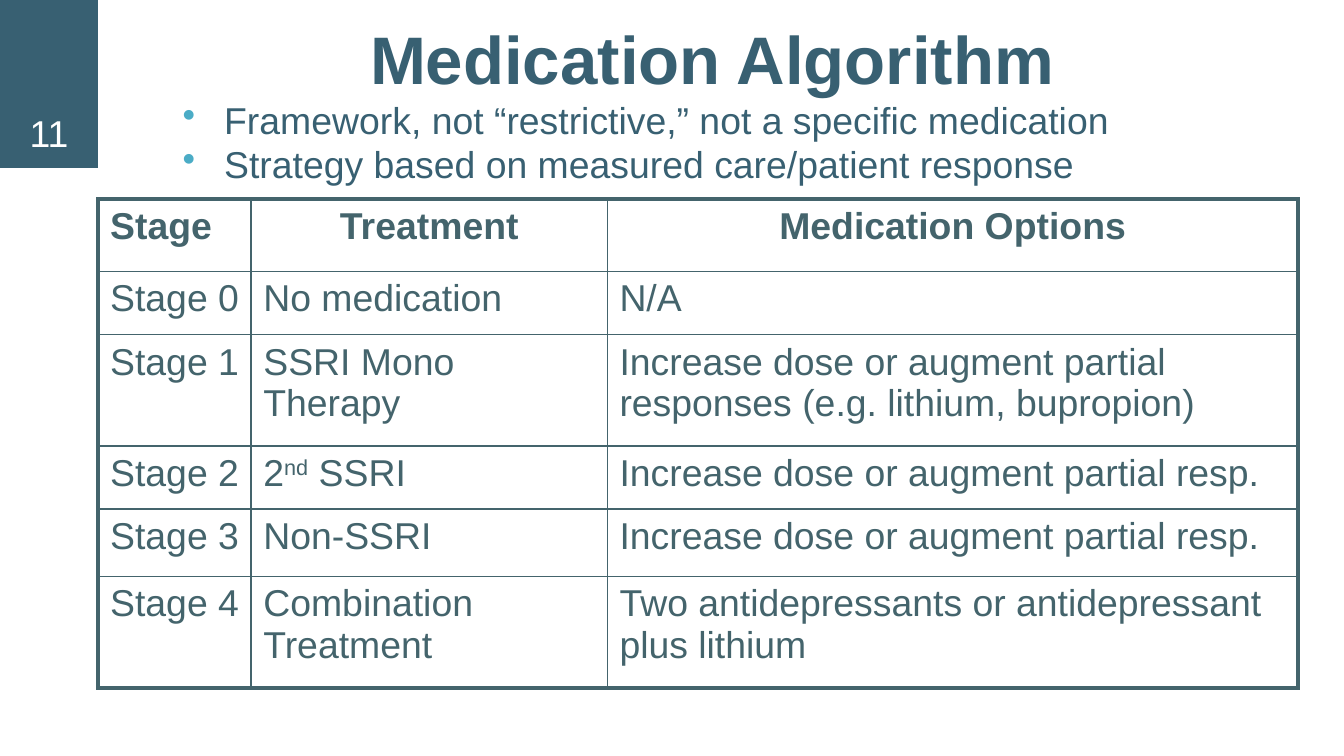
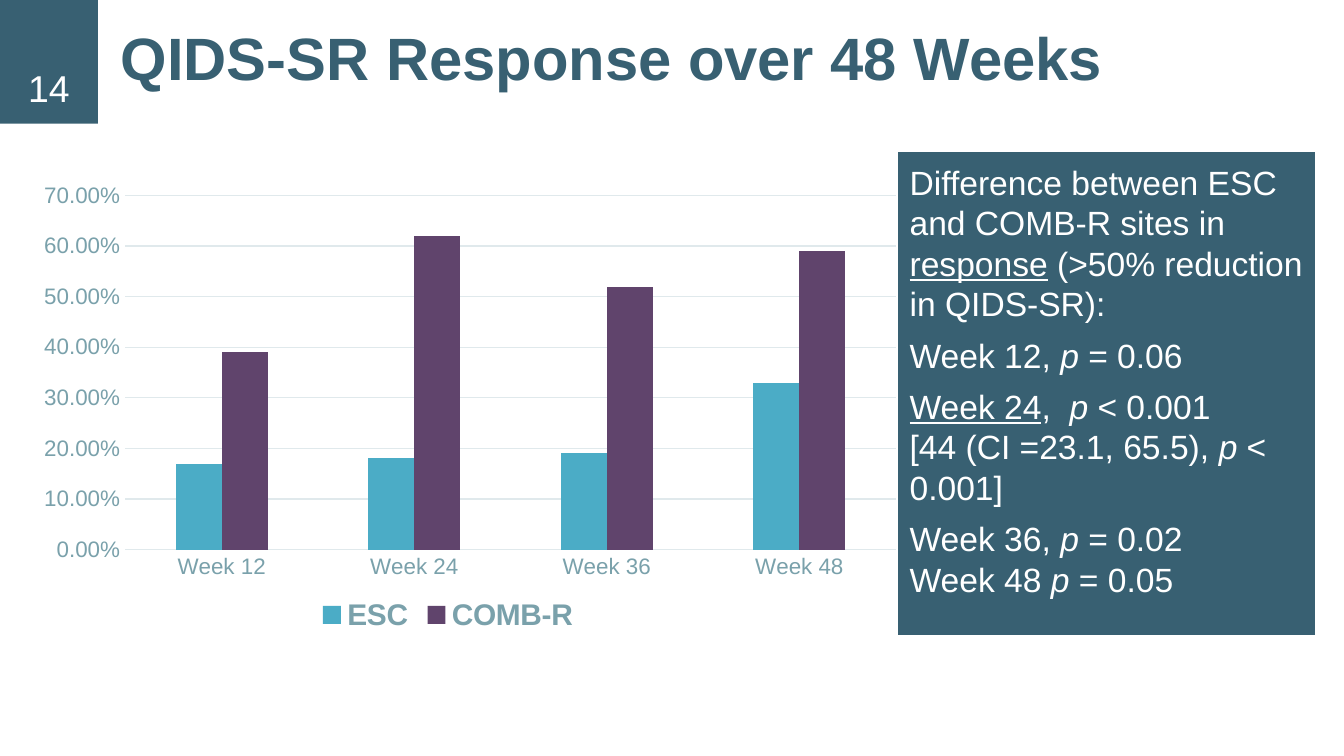
"""Build two slides on a medication algorithm and the response it produced."""
from dataclasses import dataclass

from lxml import etree
from pptx import Presentation
from pptx import util as u
from pptx.chart.data import CategoryChartData
from pptx.dml.color import RGBColor
from pptx.enum import chart as charts, shapes, text
from pptx.oxml import ns


@dataclass(frozen=True)
class Theme:
    font: str = "Arial"
    navy: str = "386072"
    slate: str = "44646C"
    axis: str = "7AA1AB"
    grid: str = "E0E9EC"
    teal: str = "4BACC6"
    plum: str = "60446C"
    white: str = "FFFFFF"
    body_size: int = 20
    panel_size: int = 18
    legend_size: int = 16
    axis_size: int = 12
    chart_size: int = 10
    outer_border: float = 2.25
    inner_border: float = 1


THEME = Theme()
LEFT, CENTER = text.PP_ALIGN.LEFT, text.PP_ALIGN.CENTER
MIDDLE, BOTTOM = text.MSO_ANCHOR.MIDDLE, text.MSO_ANCHOR.BOTTOM

ALGORITHM = {
    "title": "Medication Algorithm",
    "number": "11",
    "bullets": [
        "Framework, not “restrictive,” not a specific medication",
        "Strategy based on measured care/patient response",
    ],
    "columns": [1.14, 2.65, 5.14],
    "heights": [0.54, 0.47, 0.83, 0.47, 0.5, 0.83],
    "rows": [
        ("Stage", "Treatment", "Medication Options"),
        ("Stage 0", "No medication", "N/A"),
        ("Stage 1", "SSRI Mono Therapy",
         "Increase dose or augment partial responses (e.g. lithium, bupropion)"),
        ("Stage 2", [("2", ""), ("nd", "superscript"), (" SSRI", "")],
         "Increase dose or augment partial resp."),
        ("Stage 3", "Non-SSRI", "Increase dose or augment partial resp."),
        ("Stage 4", "Combination Treatment",
         "Two antidepressants or antidepressant plus lithium"),
    ],
}

RESPONSE = {
    "title": "QIDS-SR Response over 48 Weeks",
    "number": "14",
    "weeks": ["Week 12", "Week 24", "Week 36", "Week 48"],
    "series": [
        ("ESC", (0.17, 0.18, 0.19, 0.33), THEME.teal),
        ("COMB-R", (0.39, 0.62, 0.52, 0.59), THEME.plum),
    ],
    "plot": {"x": 0.14, "y": 0.14, "w": 0.86, "h": 0.69},
    "findings": [
        ([("Difference between ESC and COMB-R sites in ", ""),
          ("response", "underline"), (" (>50% reduction in QIDS-SR):", "")], 6),
        ([("Week 12, ", ""), ("p", "italic"), (" = 0.06", "")], 6),
        ([("Week 24", "underline"), (",  ", ""), ("p", "italic"), (" < 0.001", "")], 0),
        ([("[44 (CI =23.1, 65.5), ", ""), ("p", "italic"), (" < 0.001]", "")], 6),
        ([("Week 36, ", ""), ("p ", "italic"), ("= 0.02", "")], 0),
        ([("Week 48 ", ""), ("p", "italic"), (" = 0.05", "")], 0),
    ],
}


def color(code):
    return RGBColor.from_string(code)


def box(left, top, width, height):
    return [u.Inches(value) for value in (left, top, width, height)]


def add_solid_fill(parent, code):
    fill = etree.SubElement(parent, ns.qn("a:solidFill"))
    etree.SubElement(fill, ns.qn("a:srgbClr"), val=code)


def style_font(font, size, code, bold=False):
    font.name, font.size, font.bold = THEME.font, u.Pt(size), bold
    font.color.rgb = color(code)


def write(paragraph, content, size, code, bold=False, align=LEFT):
    """Fill a paragraph from a string or from (text, style) pairs."""
    paragraph.alignment = align
    pairs = [(content, "")] if isinstance(content, str) else content
    for words, style in pairs:
        run = paragraph.add_run()
        run.text = words
        style_font(run.font, size, code, bold)
        if style == "superscript":
            run.font._element.set("baseline", "30000")
        elif style:
            setattr(run.font, style, True)


def add_text_box(slide, place, anchor):
    frame = slide.shapes.add_textbox(*box(*place)).text_frame
    frame.word_wrap = True
    frame.vertical_anchor = anchor
    frame.margin_left = frame.margin_right = u.Inches(0.1)
    frame.margin_top = frame.margin_bottom = u.Inches(0.1)
    return frame


def add_block(slide, place):
    block = slide.shapes.add_shape(shapes.MSO_SHAPE.RECTANGLE, *box(*place))
    block.shadow.inherit = False
    block.fill.solid()
    block.fill.fore_color.rgb = color(THEME.navy)
    block.line.fill.background()
    return block


def add_slide(presentation, content, number_height, title_height, title_size, align):
    slide = presentation.slides.add_slide(presentation.slide_layouts[6])
    add_block(slide, (0, 0, 0.73, 1.25))
    title = add_text_box(slide, (0.8, 0, 9, title_height), BOTTOM)
    write(title.paragraphs[0], content["title"], title_size, THEME.navy, True, align)
    number = add_text_box(slide, (0, 0, 0.73, number_height), BOTTOM)
    write(number.paragraphs[0], content["number"],
          THEME.body_size, THEME.white, align=CENTER)
    return slide


def add_bullets(slide, lines):
    frame = add_text_box(slide, (1.26, 0.62, 7.88, 1.03), text.MSO_ANCHOR.TOP)
    for index, line in enumerate(lines):
        paragraph = frame.add_paragraph() if index else frame.paragraphs[0]
        write(paragraph, line, THEME.body_size, THEME.navy)
        properties = paragraph._p.get_or_add_pPr()
        properties.set("marL", str(u.Inches(0.31)))
        properties.set("indent", str(-u.Inches(0.31)))
        bullet_color = etree.SubElement(properties, ns.qn("a:buClr"))
        etree.SubElement(bullet_color, ns.qn("a:srgbClr"), val=THEME.teal)
        etree.SubElement(properties, ns.qn("a:buChar"), char="•")


def set_borders(cell, outer_sides):
    properties = cell._tc.get_or_add_tcPr()
    for side, outer in zip("LRTB", outer_sides):
        width = THEME.outer_border if outer else THEME.inner_border
        line = etree.SubElement(properties, ns.qn(f"a:ln{side}"), w=str(u.Pt(width)))
        add_solid_fill(line, THEME.slate)


def add_stage_table(slide, rows, columns, heights):
    place = box(0.73, 1.48, sum(columns), sum(heights))
    table = slide.shapes.add_table(len(rows), len(columns), *place).table
    table.first_row = table.horz_banding = False
    for column, width in zip(table.columns, columns):
        column.width = u.Inches(width)
    last_row, last_column = len(rows) - 1, len(columns) - 1
    for row, (values, height) in enumerate(zip(rows, heights)):
        table.rows[row].height = u.Inches(height)
        for column, value in enumerate(values):
            cell = table.cell(row, column)
            cell.margin_left = cell.margin_right = u.Inches(0.09)
            set_borders(cell, (column == 0, column == last_column,
                               row == 0, row == last_row))
            cell.fill.background()
            header = row == 0
            write(cell.text_frame.paragraphs[0], value, THEME.body_size, THEME.slate,
                  header, CENTER if header and column else LEFT)


def set_plot_layout(chart, plot):
    area = chart._chartSpace.chart.plotArea
    for existing in area.findall(ns.qn("c:layout")):
        area.remove(existing)
    layout = etree.Element(ns.qn("c:layout"))
    manual = etree.SubElement(layout, ns.qn("c:manualLayout"))
    settings = {"layoutTarget": "inner", "xMode": "edge", "yMode": "edge", **plot}
    for name, value in settings.items():
        etree.SubElement(manual, ns.qn(f"c:{name}"), val=str(value))
    area.insert(0, layout)


def fill_chart(chart, code):
    properties = etree.Element(ns.qn("c:spPr"))
    add_solid_fill(properties, code)
    chart._chartSpace.find(ns.qn("c:txPr")).addprevious(properties)


def add_response_chart(slide, content):
    data = CategoryChartData(number_format="0.00%")
    data.categories = content["weeks"]
    for name, values, _ in content["series"]:
        data.add_series(name, values)
    chart = slide.shapes.add_chart(charts.XL_CHART_TYPE.COLUMN_CLUSTERED,
                                   *box(0, 0.92, 6.67, 3.82), data).chart
    style_font(chart.font, THEME.chart_size, THEME.slate)
    fill_chart(chart, THEME.white)
    chart.has_title = False
    chart.has_legend = True
    chart.legend.position = charts.XL_LEGEND_POSITION.BOTTOM
    chart.legend.include_in_layout = False
    style_font(chart.legend.font, THEME.legend_size, THEME.axis, True)

    plot = chart.plots[0]
    plot.gap_width, plot.overlap, plot.vary_by_categories = 219, 0, False
    for series, (_, _, code) in zip(plot.series, content["series"]):
        series.format.fill.solid()
        series.format.fill.fore_color.rgb = color(code)

    weeks, shares = chart.category_axis, chart.value_axis
    for axis in (weeks, shares):
        axis.major_tick_mark = axis.minor_tick_mark = charts.XL_TICK_MARK.NONE
        style_font(axis.tick_labels.font, THEME.axis_size, THEME.axis)
    shares.has_major_gridlines = True
    for line in (weeks.format.line, shares.major_gridlines.format.line):
        line.color.rgb = color(THEME.grid)
        line.width = u.Pt(0.75)
    shares.format.line.fill.background()
    shares.minimum_scale, shares.maximum_scale, shares.major_unit = 0, 0.7, 0.1
    shares.tick_labels.number_format = "0.00%"
    shares.tick_labels.number_format_is_linked = False
    set_plot_layout(chart, content["plot"])


def add_findings(slide, findings):
    panel = add_block(slide, (6.67, 1.12, 3.13, 3.62))
    panel.line.color.rgb = color(THEME.white)
    panel.line.width = u.Pt(2)
    frame = panel.text_frame
    frame.word_wrap = True
    frame.vertical_anchor = MIDDLE
    frame.margin_bottom = u.Inches(0.25)
    for index, (runs, gap) in enumerate(findings):
        paragraph = frame.add_paragraph() if index else frame.paragraphs[0]
        write(paragraph, runs, THEME.panel_size, THEME.white)
        paragraph.space_after = u.Pt(gap)


def main():
    presentation = Presentation()
    presentation.slide_width = u.Inches(10)
    presentation.slide_height = u.Inches(10) * 9 // 16

    slide = add_slide(presentation, ALGORITHM, 1.25, 0.83, 36, CENTER)
    add_bullets(slide, ALGORITHM["bullets"])
    add_stage_table(slide, ALGORITHM["rows"], ALGORITHM["columns"], ALGORITHM["heights"])

    slide = add_slide(presentation, RESPONSE, 0.92, 0.79, 32, LEFT)
    add_findings(slide, RESPONSE["findings"])
    add_response_chart(slide, RESPONSE)

    presentation.save("out.pptx")


if __name__ == "__main__":
    main()
